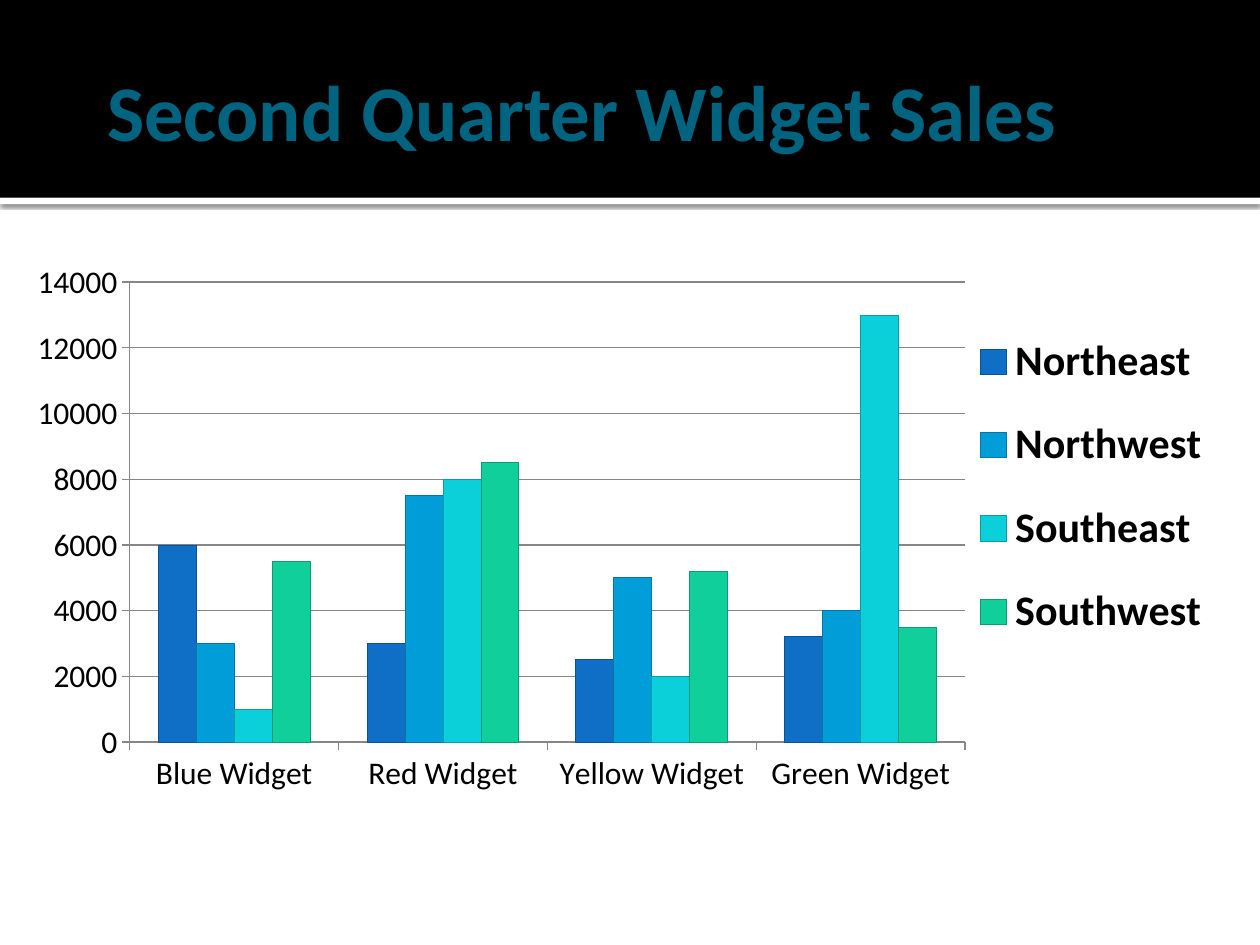
from lxml import etree
from pptx import Presentation
from pptx.chart import data as cd
from pptx.dml.color import RGBColor
from pptx.enum import chart as ch, shapes as sh, text as tx
from pptx.oxml import parse_xml
from pptx.oxml.ns import qn
from pptx.util import Inches, Pt

FONT = "Calibri"
BLACK = RGBColor(0x00, 0x00, 0x00)
WHITE = RGBColor(0xFF, 0xFF, 0xFF)
TEAL = RGBColor(0x00, 0x63, 0x7F)
GREY = RGBColor(0x86, 0x86, 0x86)

TITLE = "Second Quarter Widget Sales"
BANDS = [(1.57, 0.05, WHITE), (0, 1.57, BLACK)]
CATS = ["Blue Widget", "Red Widget", "Yellow Widget", "Green Widget"]
SALES = [
    ("Northeast", (6000, 3000, 2500, 3200), RGBColor(0x0F, 0x6F, 0xC6)),
    ("Northwest", (3000, 7500, 5000, 4000), RGBColor(0x00, 0x9D, 0xD9)),
    ("Southeast", (1000, 8000, 2000, 13000), RGBColor(0x0B, 0xD0, 0xD9)),
    ("Southwest", (5500, 8500, 5200, 3500), RGBColor(0x10, 0xCF, 0x9B)),
]
PLOT = (0.103, 0.065, 0.663, 0.742)
LEGEND = (0.766, 0.1, 0.2, 0.59)
SHADOW = (
    '<a:effectLst xmlns:a="http://schemas.openxmlformats.org/drawingml/2006/main">'
    '<a:outerShdw blurRad="31750" dist="10160" dir="5400000" algn="tl" rotWithShape="0">'
    '<a:srgbClr val="000000"><a:alpha val="60000"/></a:srgbClr>'
    '</a:outerShdw></a:effectLst>'
)


def add_band(slide, top, height, color):
    band = slide.shapes.add_shape(
        sh.MSO_SHAPE.RECTANGLE, 0, Inches(top), Inches(10), Inches(height))
    band.shadow.inherit = False
    band.fill.solid()
    band.fill.fore_color.rgb = color
    band.line.fill.background()
    return band


def set_title(slide):
    title = slide.shapes.title
    title.left, title.top = Inches(0.75), Inches(0.25)
    title.width, title.height = Inches(8.5), Inches(1.25)
    frame = title.text_frame
    frame.word_wrap = True
    frame.vertical_anchor = tx.MSO_ANCHOR.MIDDLE
    frame.margin_left = Inches(0.1)
    frame.margin_right = frame.margin_top = frame.margin_bottom = Inches(0.05)
    para = frame.paragraphs[0]
    para.alignment = tx.PP_ALIGN.LEFT
    run = para.add_run()
    run.text = TITLE
    font = run.font
    font.name, font.size, font.bold = FONT, Pt(45), True
    font.color.rgb = TEAL
    slide.shapes._spTree.append(title._element)


def place(node, box, inner=False):
    for old in node.findall(qn("c:layout")):
        node.remove(old)
    layout = etree.Element(qn("c:layout"))
    manual = etree.SubElement(layout, qn("c:manualLayout"))
    rules = [("layoutTarget", "inner")] if inner else []
    rules += [("xMode", "edge"), ("yMode", "edge"), *zip("xywh", box)]
    for tag, val in rules:
        etree.SubElement(manual, qn("c:" + tag)).set("val", str(val))
    node.insert(0 if inner else 1, layout)


def add_sales(slide):
    data = cd.CategoryChartData()
    data.categories = CATS
    for name, vals, _ in SALES:
        data.add_series(name, vals)
    chart = slide.shapes.add_chart(
        ch.XL_CHART_TYPE.COLUMN_CLUSTERED, 0, Inches(1.92),
        Inches(10), Inches(4.92), data).chart
    chart.has_title = False
    chart.font.name, chart.font.size = FONT, Pt(18)
    chart.font.color.rgb = BLACK

    plot = chart.plots[0]
    plot.gap_width, plot.overlap, plot.vary_by_categories = 150, 0, False
    for series, (_, _, color) in zip(plot.series, SALES):
        series.format.fill.solid()
        series.format.fill.fore_color.rgb = color
        series.format.line.color.rgb = color
        series.format.line.color.brightness = -0.25
        series.format.line.width = Pt(0.5)

    val, cat = chart.value_axis, chart.category_axis
    val.minimum_scale, val.maximum_scale, val.major_unit = 0, 14000, 2000
    val.has_major_gridlines = True
    for line in (val.format.line, cat.format.line, val.major_gridlines.format.line):
        line.color.rgb = GREY
        line.width = Pt(0.75)
    for axis in (val, cat):
        axis.major_tick_mark = ch.XL_TICK_MARK.OUTSIDE
        axis.minor_tick_mark = ch.XL_TICK_MARK.NONE
    cat.tick_label_position = ch.XL_TICK_LABEL_POSITION.LOW

    chart.has_legend = True
    legend = chart.legend
    legend.position = ch.XL_LEGEND_POSITION.RIGHT
    legend.include_in_layout = False
    font = legend.font
    font.name, font.size, font.bold = FONT, Pt(24), True
    font.color.rgb = BLACK
    place(legend._element, LEGEND)
    place(chart._chartSpace.find(".//" + qn("c:plotArea")), PLOT, True)


def main():
    prs = Presentation()
    prs.slide_width, prs.slide_height = Inches(10), Inches(7.5)
    slide = prs.slides.add_slide(prs.slide_layouts[5])
    strip, _ = [add_band(slide, *band) for band in BANDS]
    props = strip._element.spPr
    props.replace(props.find(qn("a:effectLst")), parse_xml(SHADOW))
    set_title(slide)
    add_sales(slide)
    prs.save("out.pptx")


if __name__ == "__main__":
    main()
